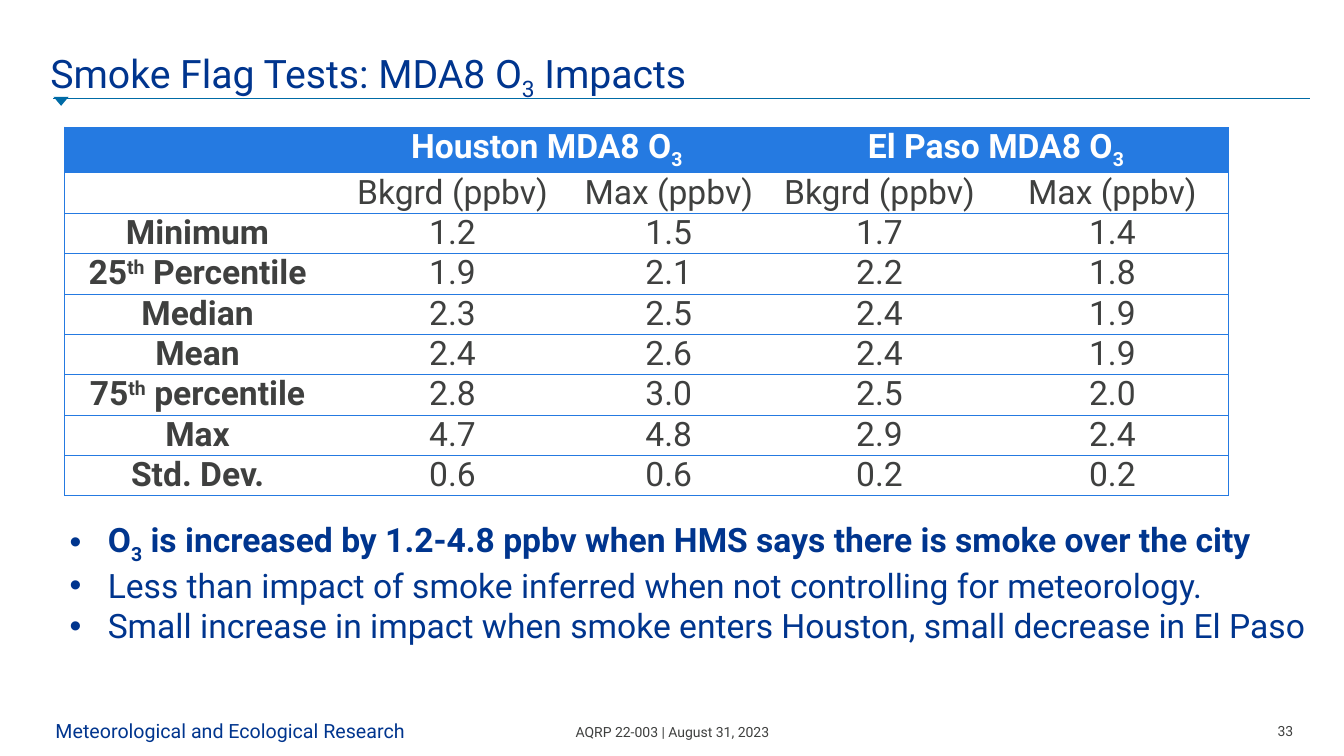
"""Build the slide on smoke flag tests and their MDA8 ozone impacts."""
import pptx
import pptx.dml.color
import pptx.enum.shapes
import pptx.enum.text
import pptx.oxml
import pptx.oxml.ns
import pptx.util
import lxml.etree

NAVY, TEAL, BLUE, GREY, WHITE = "00358E", "006BA6", "257AE1", "3F403F", "FFFFFF"
FONT = "Roboto"
NO_STYLE = "{2D5ABB26-0587-4C30-8999-92F81FD0307C}"
qn = pptx.oxml.ns.qn
rgb = pptx.dml.color.RGBColor.from_string
ALIGN = pptx.enum.text.PP_ALIGN
ANCHOR = pptx.enum.text.MSO_ANCHOR


def write(p, text, size=24, color=NAVY, bold=False, align=ALIGN.LEFT, shift=-25):
    """Fill a paragraph; text between tildes is shifted off the baseline."""
    p.alignment = align
    for i, part in enumerate(text.split("~")):
        r = p.add_run()
        r.text = part
        r.font.name = FONT
        r.font.size = pptx.util.Pt(size)
        r.font.bold = bold
        r.font.color.rgb = rgb(color)
        if i % 2:
            r.font._element.set("baseline", str(shift * 1000))


prs = pptx.Presentation()
prs.slide_width = pptx.util.Inches(13.33)
prs.slide_height = pptx.util.Inches(7.5)
col, row = prs.slide_width / 100, prs.slide_height / 100
s = prs.slides.add_slide(prs.slide_layouts[6])

rule = s.shapes.add_connector(
    pptx.enum.shapes.MSO_CONNECTOR.STRAIGHT,
    int(3.98 * col), int(13.07 * row), int(97.5 * col), int(13.07 * row))
rule.line.color.rgb = rgb(TEAL)
rule.line.width = pptx.util.Pt(0.75)
lxml.etree.SubElement(rule._element.spPr, qn("a:effectLst"))

sp = s.shapes.add_shape(
    pptx.enum.shapes.MSO_SHAPE.ISOSCELES_TRIANGLE,
    int(3.98 * col), int(12.8 * row), int(1.13 * col), int(1.2 * row))
sp.rotation = 180
sp.shadow.inherit = False
sp.fill.solid()
sp.fill.fore_color.rgb = rgb(TEAL)
sp.line.fill.background()

bullets = [
    ("O~3~ is increased by 1.2-4.8 ppbv when HMS says there is smoke over the city", True),
    ("Less than impact of smoke inferred when not controlling for meteorology.", False),
    ("Small increase in impact when smoke enters Houston, small decrease in El Paso", False),
]
small = {"size": 10, "color": GREY}
boxes = [
    (3.75, 3.07, 75, 9.73, 0, ["Smoke Flag Tests: MDA8 O~3~ Impacts"], {"size": 28}),
    (38.1, 95.73, 23.85, 2.27, 0, ["AQRP 22-003 | August 31, 2023"],
     {**small, "align": ALIGN.CENTER}),
    (94.8, 95.6, 1.43, 2.27, 0, ["33"], {**small, "align": ALIGN.RIGHT}),
    (3.75, 95.07, 28.05, 3.2, 0.05, ["Meteorological and Ecological Research"], {"size": 14}),
    (4.8, 68.67, 94.5, 16, 0.05, bullets, {}),
]
for x, y, w, h, inset, lines, style in boxes:
    tf = s.shapes.add_textbox(int(x * col), int(y * row), int(w * col), int(h * row)).text_frame
    tf.word_wrap = True
    tf.margin_left = pptx.util.Inches(inset)
    tf.margin_right = tf.margin_top = tf.margin_bottom = 0
    if style.get("size") == 28:
        tf.vertical_anchor = ANCHOR.BOTTOM
        tf.paragraphs[0].line_spacing = 0.8
    for i, line in enumerate(lines):
        p = tf.add_paragraph() if i else tf.paragraphs[0]
        if lines is bullets:
            pPr = p._p.get_or_add_pPr()
            indent = pptx.util.Inches(0.38)
            pPr.set("marL", str(indent))
            pPr.set("indent", str(-indent))
            lxml.etree.SubElement(pPr, qn("a:buFont")).set("typeface", "Arial")
            lxml.etree.SubElement(pPr, qn("a:buChar")).set("char", "•")
            write(p, line[0], bold=line[1])
        else:
            write(p, line, **style)

rows = [
    ["", "Houston MDA8 O~3~", "", "El Paso MDA8 O~3~", ""],
    ["", "Bkgrd (ppbv)", "Max (ppbv)", "Bkgrd (ppbv)", "Max (ppbv)"],
    ["Minimum", "1.2", "1.5", "1.7", "1.4"],
    ["25~th~ Percentile", "1.9", "2.1", "2.2", "1.8"],
    ["Median", "2.3", "2.5", "2.4", "1.9"],
    ["Mean", "2.4", "2.6", "2.4", "1.9"],
    ["75~th~ percentile", "2.8", "3.0", "2.5", "2.0"],
    ["Max", "4.7", "4.8", "2.9", "2.4"],
    ["Std. Dev.", "0.6", "0.6", "0.2", "0.2"],
]
widths = [19.8, 18.15, 14.03, 17.33, 17.33]
heights = [5.87] + [5.2] * 8
table = s.shapes.add_table(
    len(rows), len(widths), int(4.8 * col), int(16.8 * row),
    int(sum(widths) * col), int(sum(heights) * row)).table
table.horz_banding = False
table._tbl.tblPr.find(qn("a:tableStyleId")).text = NO_STYLE
for j, width in enumerate(widths):
    table.columns[j].width = int(width * col)
for i, values in enumerate(rows):
    table.rows[i].height = int(heights[i] * row)
    for j, value in enumerate(values):
        cell = table.cell(i, j)
        cell.margin_left = cell.margin_right = pptx.util.Inches(0.07)
        cell.margin_top = cell.margin_bottom = 0
        if i == 0:
            cell.fill.solid()
            cell.fill.fore_color.rgb = rgb(BLUE)
        else:
            cell.fill.background()
        if value:
            write(cell.text_frame.paragraphs[0], value, color=GREY if i else WHITE,
                  bold=i == 0 or j == 0, align=ALIGN.CENTER, shift=30 if i else -25)
        sides = ["L"] * (j == 0) + ["R"] * (j == len(widths) - 1) + ["T", "B"]
        for k, side in enumerate(sides):
            ln = lxml.etree.Element(qn("a:ln" + side), w=str(pptx.util.Pt(0.75)))
            fill = lxml.etree.SubElement(ln, qn("a:solidFill"))
            lxml.etree.SubElement(fill, qn("a:srgbClr")).set("val", BLUE)
            cell._tc.get_or_add_tcPr().insert(k, ln)
for j in (1, 3):
    table.cell(0, j).merge(table.cell(0, j + 1))

prs.save("out.pptx")
